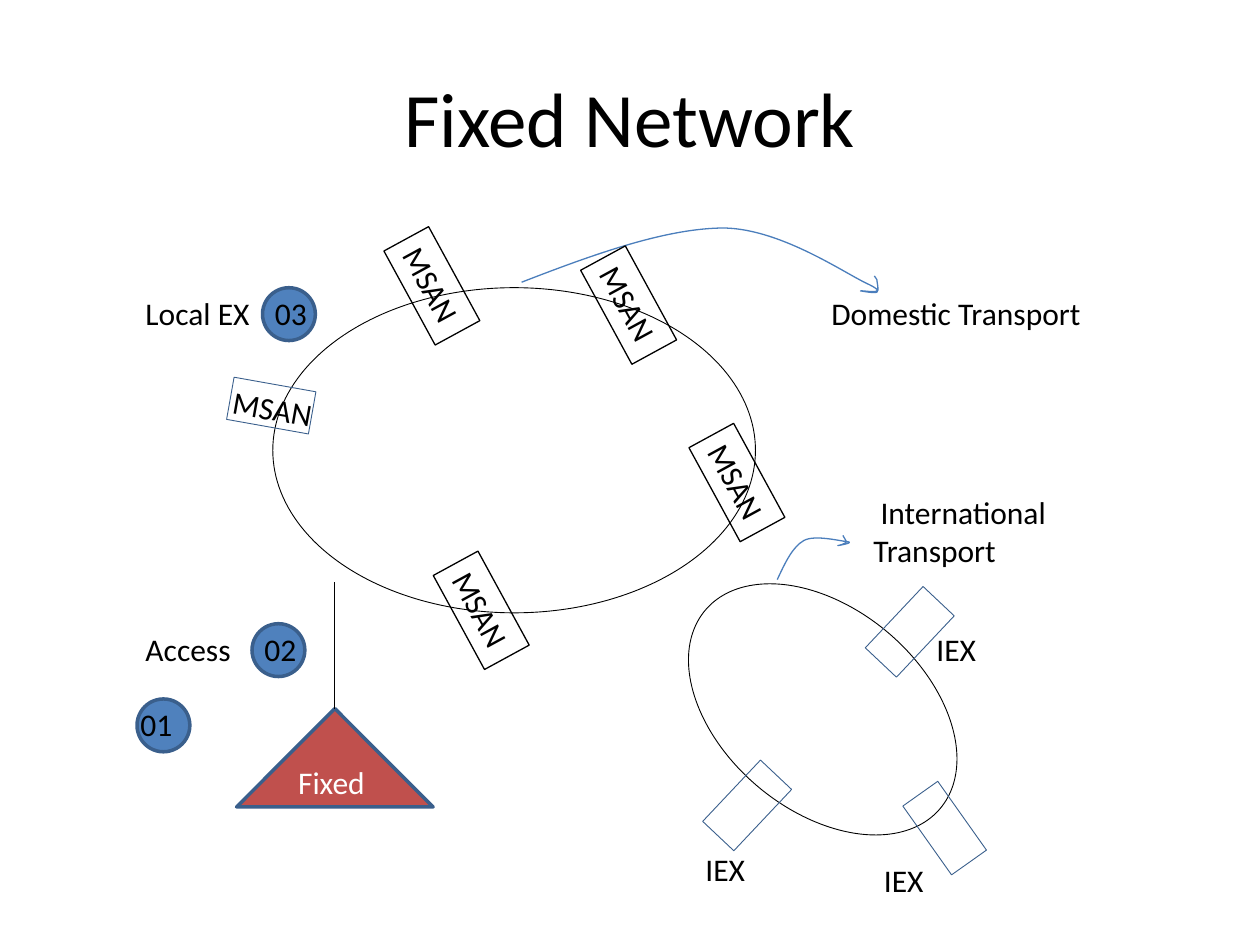
from lxml.etree import SubElement
from pptx import Presentation
from pptx.dml.color import RGBColor
from pptx.enum.shapes import MSO_CONNECTOR, MSO_SHAPE
from pptx.enum.text import MSO_ANCHOR, MSO_AUTO_SIZE, PP_ALIGN
from pptx.oxml.ns import qn
from pptx.util import Pt

COLORS = {"ink": "000000", "white": "FFFFFF", "blue": "4F81BD",
          "edge": "3A5F8C", "arrow": "4B7EBC", "red": "C0504D"}
FONT = "Calibri"

# Content: positions are left, top, width, height
TITLE = ("Fixed Network", 36, 21.6, 648, 90)
RINGS = [(155.9, 164.4, 275.8, 185.8, 0), (382.3, 347.8, 175.7, 115.2, 40.2)]
NODES = [(142.8, 208, 24.5, 47.5, 280.1), (527.6, 449.1, 24.5, 48.2, 324.7),
         (507.6, 337, 24.5, 48.2, 43.3), (414.7, 436.2, 24.5, 48.2, 43.3)]
MSAN_SIZE, MSAN_TURN = (61.2, 29.1), 61.4
MSANS = [(244.4, 334.2), (390.5, 261.2), (328.6, 159.8), (216.2, 148.8)]
BADGE_SIZE = 30.2
BADGES = [("01", 78.3, 399.4, 73.2), ("02", 144, 356.4, 144),
          ("03", 150, 164.4, 150)]  # last value: left of the number
LABELS = [
    ("MSAN", 125.6, 221.8, 92.9, 29.1, 10.1),
    (" Local EX", 72, 164.4, 126, 29.1, 0),
    (" Access", 72, 356.4, 126, 29.1, 0),
    ("Domestic Transport", 468, 164.4, 168, 29.1, 0),
    (" International Transport", 492, 278.3, 126, 50.9, 0),
    ("IEX", 528, 356.4, 48, 29.1, 0),
    ("IEX", 396, 482.4, 48, 29.1, 0),
    ("IEX", 498, 488.4, 48, 29.1, 0),
]
TRIANGLE = ("Fixed", 135.2, 404.9, 112.3, 56.2)
ACCESS_TOP = 332.6

# Hand-drawn arrows: start point, then segments
# (three points make a Bezier curve, one point a straight line)
ARROWS = [
    ((444.2, 331.2), [
        ((448.6, 321.8), (452.9, 312.5), (459.4, 308.9)),
        ((465.8, 305.3), (481.7, 309.6), (484.6, 309.6)),
        ((488.2, 310.3), (478.8, 311.8), (478.8, 311.8)),
        ((478.8, 311.8), (483.1, 311), (483.8, 309.6)),
        ((481.7, 306),)]),
    ((298.1, 161.3), [
        ((339.1, 145.4), (380.9, 130.3), (414, 130.3)),
        ((447.1, 131), (483.8, 157), (496.8, 162.7)),
        ((509.8, 169.2), (491, 165.6), (491.8, 166.3)),
        ((492.5, 166.3), (499.7, 167.8), (501.1, 167)),
        ((502.6, 166.3), (501.1, 161.3), (501.1, 159.8)),
        ((500.4, 158.4), (500.4, 158.4), (499.7, 157.7))]),
]

presentation = Presentation()
presentation.slide_width, presentation.slide_height = Pt(720), Pt(540)
slide = presentation.slides.add_slide(presentation.slide_layouts[6])
shapes = slide.shapes


def color(name):
    return RGBColor.from_string(COLORS[name])


def style(shape, line, width, fill=None):
    shape.shadow.inherit = False
    shape.line.color.rgb = color(line)
    shape.line.width = Pt(width)
    if fill:
        shape.fill.solid()
        shape.fill.fore_color.rgb = color(fill)
    else:
        shape.fill.background()


def write(shape, text, size=18, ink="ink", align=PP_ALIGN.LEFT,
          anchor=MSO_ANCHOR.TOP, wrap=True, grow=True):
    frame = shape.text_frame
    frame.word_wrap = wrap
    frame.vertical_anchor = anchor
    if grow:
        frame.auto_size = MSO_AUTO_SIZE.SHAPE_TO_FIT_TEXT
    paragraph = frame.paragraphs[0]
    paragraph.alignment = align
    run = paragraph.add_run()
    run.text = text
    run.font.name, run.font.size = FONT, Pt(size)
    run.font.color.rgb = color(ink)


def add_shape(kind, box, line, width, fill=None, turn=0):
    shape = shapes.add_shape(kind, *map(Pt, box))
    shape.rotation = turn
    style(shape, line, width, fill)
    return shape


def add_label(text, left, top, width, height, turn=0, **options):
    label = shapes.add_textbox(Pt(left), Pt(top), Pt(width), Pt(height))
    label.rotation = turn
    write(label, text, **options)


def add_arrow(start, segments):
    points = [(Pt(x), Pt(y)) for segment in segments for x, y in segment]
    builder = shapes.build_freeform(*map(Pt, start), scale=1.0)
    builder.add_line_segments(points, close=False)
    arrow = builder.convert_to_shape()
    style(arrow, "arrow", 0.75)
    # Gather each three line points into one Bezier curve
    outline = next(arrow._element.iter(qn("a:path")))
    lines = iter(outline.findall(qn("a:lnTo")))
    for segment in segments:
        parts = [next(lines) for _ in segment]
        if len(parts) == 3:
            curve = SubElement(outline, qn("a:cubicBezTo"))
            for part in parts:
                curve.append(part[0])
                outline.remove(part)
        else:
            outline.append(parts[0])


# Title
add_label(*TITLE, size=44, align=PP_ALIGN.CENTER,
          anchor=MSO_ANCHOR.MIDDLE, grow=False)

# Rings and their plain nodes
for *box, turn in RINGS:
    add_shape(MSO_SHAPE.OVAL, box, "ink", 0.5, turn=turn)
for *box, turn in NODES:
    add_shape(MSO_SHAPE.RECTANGLE, box, "edge", 0.5, turn=turn)

# Numbered badges
for number, left, top, number_left in BADGES:
    add_shape(MSO_SHAPE.OVAL, (left, top, BADGE_SIZE, BADGE_SIZE), "edge", 2, "blue")
    add_label(number, number_left, top, 36, 29.1)

# Labels
for label in LABELS:
    add_label(*label)

# Transport arrows
for start, segments in ARROWS:
    add_arrow(start, segments)

# MSAN boxes on the domestic ring
for left, top in MSANS:
    box = add_shape(MSO_SHAPE.RECTANGLE, (left, top, *MSAN_SIZE), "ink", 0.75,
                    turn=MSAN_TURN)
    write(box, "MSAN", wrap=False)

# Fixed access triangle and its line to the ring
text, left, top, width, height = TRIANGLE
triangle = add_shape(MSO_SHAPE.ISOSCELES_TRIANGLE, (left, top, width, height),
                     "edge", 2, "red")
write(triangle, text, ink="white", anchor=MSO_ANCHOR.MIDDLE, grow=False)
middle = Pt(left + width / 2)
access = shapes.add_connector(MSO_CONNECTOR.STRAIGHT, middle, Pt(ACCESS_TOP),
                              middle, Pt(top))
access.end_connect(triangle, 0)
access.line.color.rgb = color("ink")
access.line.width = Pt(0.75)
SubElement(access._element.spPr, qn("a:effectLst"))

presentation.save("out.pptx")
